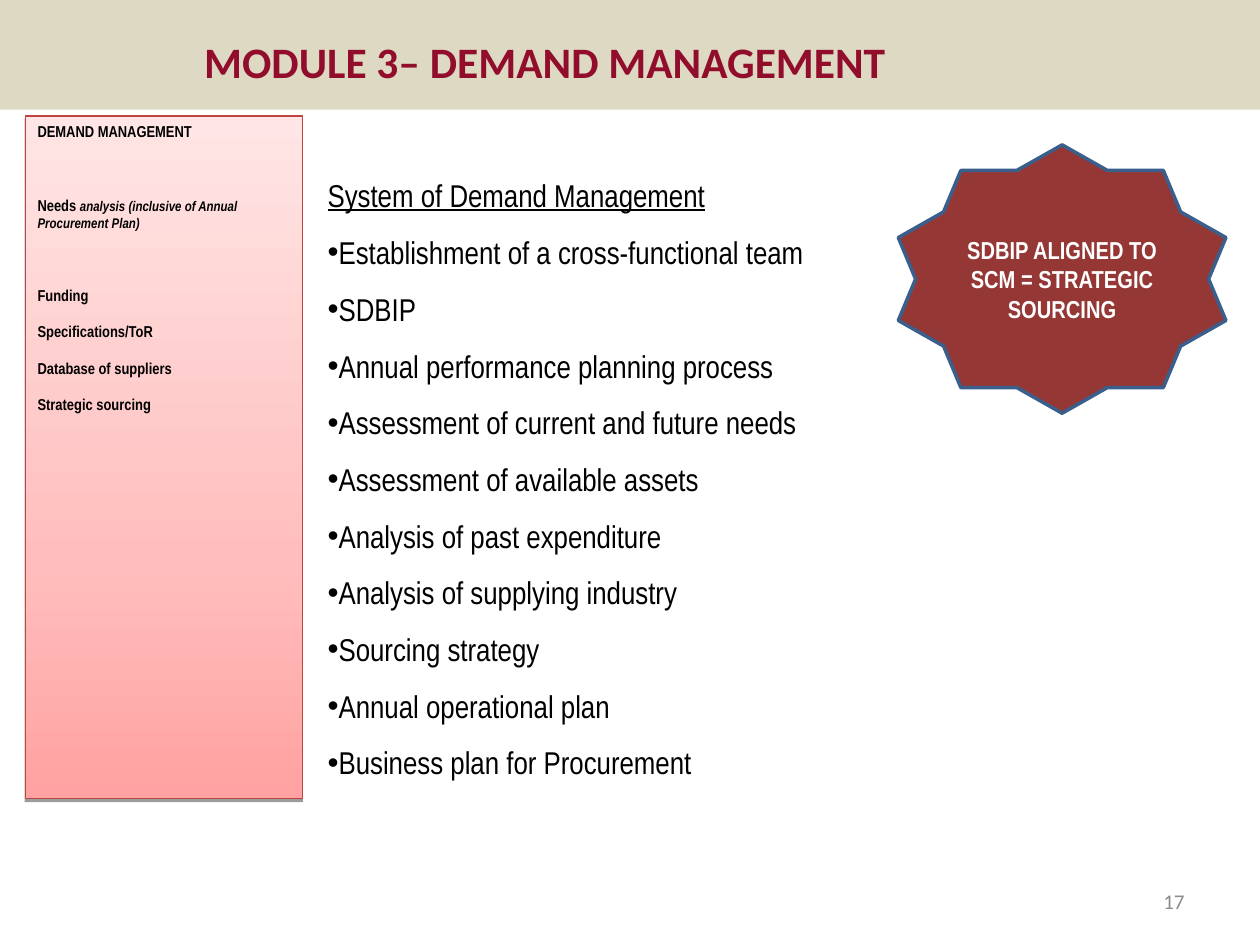
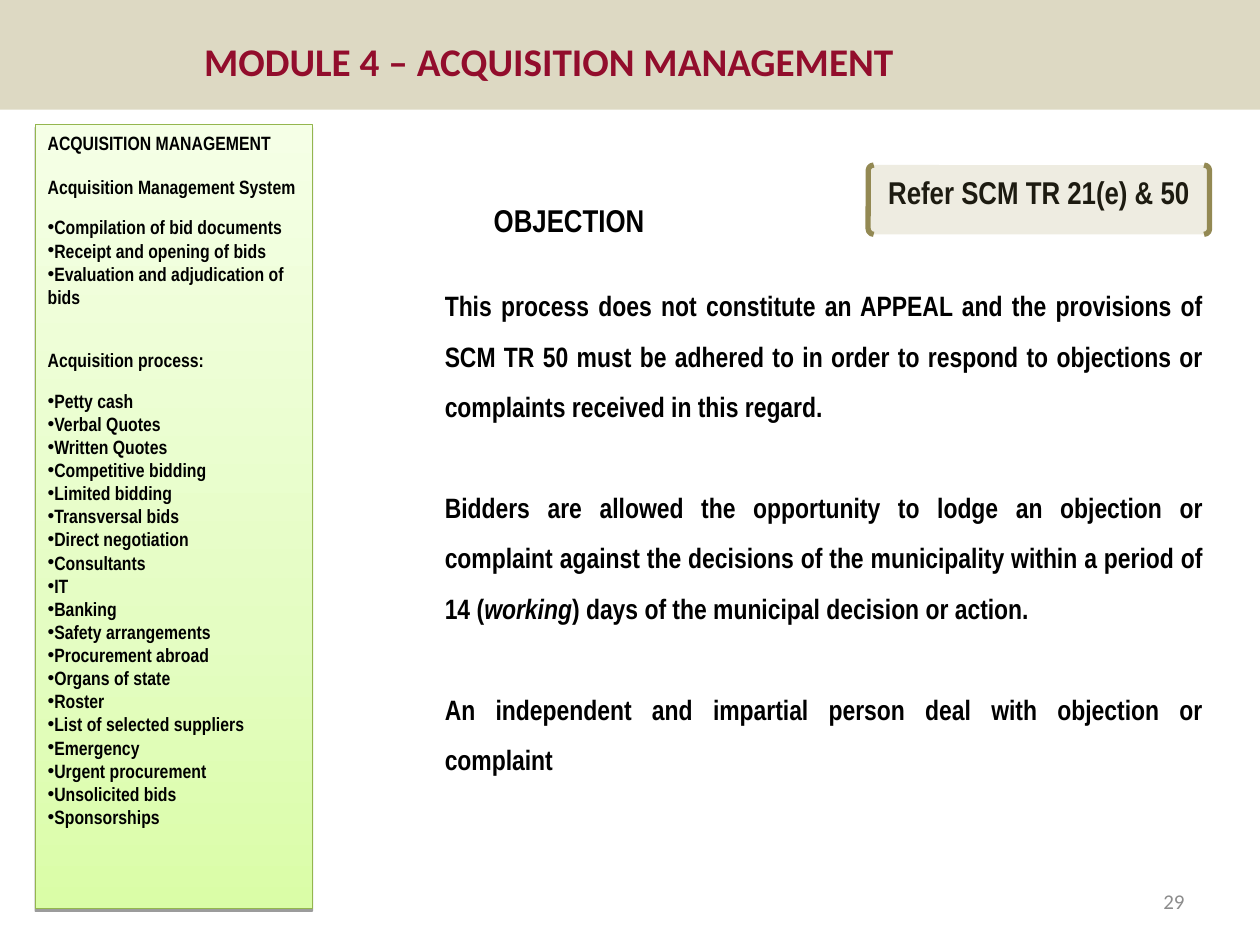
from dataclasses import dataclass, field
from typing import Any, NamedTuple

from lxml import etree
from pptx import Presentation
from pptx.dml.color import RGBColor
from pptx.enum.shapes import MSO_SHAPE
from pptx.enum.text import MSO_ANCHOR, MSO_AUTO_SIZE, PP_ALIGN
from pptx.oxml.ns import qn
from pptx.util import Emu, Pt

RECT, STAR, BRACKETS = MSO_SHAPE.RECTANGLE, MSO_SHAPE.STAR_10_POINT, MSO_SHAPE.DOUBLE_BRACKET
TOP, MIDDLE = MSO_ANCHOR.TOP, MSO_ANCHOR.MIDDLE
LEFT, CENTER, RIGHT, JUSTIFY = PP_ALIGN.LEFT, PP_ALIGN.CENTER, PP_ALIGN.RIGHT, PP_ALIGN.JUSTIFY
NO_FIT = MSO_AUTO_SIZE.NONE
PX = 9144  # EMU per px, 100 px to the inch


@dataclass(frozen=True)
class Theme:
    heading_font: str = "Calibri"
    body_font: str = "Arial Narrow"
    band: str = "DDD9C3"
    title: str = "920D2C"
    text: str = "000000"
    number: str = "8C8C8C"
    star_fill: str = "953735"
    star_line: str = "3A5F8C"
    star_text: str = "FFFFFF"
    note_fill: str = "EEECE1"
    note_line: str = "938953"
    note_text: str = "1D1B11"
    red_stops: tuple = ("FFA2A1", "FFBEBD", "FFE5E5")
    red_line: str = "BC4542"
    green_stops: tuple = ("DAFDA7", "E4FDC2", "F5FFE6")
    green_line: str = "94B64E"
    large: int = 18
    medium: int = 16
    callout: int = 14
    small: int = 12


THEME = Theme()


class Box(NamedTuple):
    left: int
    top: int
    width: int
    height: int

    def emu(self) -> list[Emu]:
        return [Emu(v * PX) for v in self]


class Run(NamedTuple):
    text: str
    format: dict[str, Any] = {}


class TextStyle(NamedTuple):
    size: float
    color: str = THEME.text
    font: str = THEME.body_font
    bold: bool = True


@dataclass
class Para:
    runs: list[Run]
    bullet: bool = False
    format: dict[str, Any] = field(default_factory=dict)


@dataclass
class Sidebar:
    box: Box
    stops: tuple
    line: str
    size: int
    paras: list[Para]


def para(text: str, bullet: bool = False, **values: Any) -> Para:
    return Para([Run(text)], bullet, values)


def bullets(*texts: str) -> list[Para]:
    return [para(text, True) for text in texts]


def apply(target: Any, values: dict[str, Any]) -> None:
    for name, value in values.items():
        setattr(target, name, value)


def sub(parent: Any, tag: str, **attrs: Any) -> Any:
    return etree.SubElement(parent, qn(tag), {k: str(v) for k, v in attrs.items()})


# Text
def write(shape: Any, paras: list[Para], style: TextStyle, anchor: Any = TOP,
          align: Any = LEFT, spacing: float = 1.0, wrap: bool = True) -> None:
    tf = shape.text_frame
    apply(tf, dict(auto_size=NO_FIT, word_wrap=wrap, vertical_anchor=anchor))
    for i, item in enumerate(paras):
        p = tf.paragraphs[0] if i == 0 else tf.add_paragraph()
        apply(p, dict(alignment=align, line_spacing=spacing,
                      space_before=Pt(0), space_after=Pt(0)) | item.format)
        p_pr = p._p.get_or_add_pPr()
        p_pr.set("marL", "0")
        p_pr.set("indent", "0")
        if item.bullet:
            sub(p_pr, "a:buFont", typeface="Arial")
            sub(p_pr, "a:buChar", char="•")
        else:
            sub(p_pr, "a:buNone")
        for run in item.runs:
            r = p.add_run()
            r.text = run.text
            apply(r.font, dict(name=style.font, size=Pt(style.size), bold=style.bold) | run.format)
            r.font.color.rgb = RGBColor.from_string(style.color)


def place(shape: Any, box: Box) -> Any:
    apply(shape, dict(zip(("left", "top", "width", "height"), box.emu())))
    return shape


def add_label(s: Any, box: Box, text: str, style: TextStyle, **layout: Any) -> None:
    write(s.shapes.add_textbox(*box.emu()), [para(text)], style, **layout)


# Shapes
def add_shape(s: Any, kind: Any, box: Box, fill: str | None = None,
              line: str | None = None, width: float = 1) -> Any:
    sp = s.shapes.add_shape(kind, *box.emu())
    sp.shadow.inherit = False
    if fill:
        sp.fill.solid()
        sp.fill.fore_color.rgb = RGBColor.from_string(fill)
    if line:
        sp.line.color.rgb = RGBColor.from_string(line)
        sp.line.width = Pt(width)
    else:
        sp.line.fill.background()
    return sp


def add_sidebar(s: Any, bar: Sidebar) -> None:
    sp = add_shape(s, RECT, bar.box, line=bar.line, width=0.75)
    sp_pr = sp._element.spPr
    # Gradient rising from the bottom
    grad = etree.Element(qn("a:gradFill"), rotWithShape="1")
    stops = sub(grad, "a:gsLst")
    for pos, color in zip((0, 35, 100), bar.stops):
        sub(sub(stops, "a:gs", pos=pos * 1000), "a:srgbClr", val=color)
    sub(grad, "a:lin", ang=270 * 60000, scaled=1)
    sp_pr.find(qn("a:prstGeom")).addnext(grad)
    # Thin shadow below
    shadow = sub(sp_pr.find(qn("a:effectLst")), "a:outerShdw", blurRad=0, dist=Pt(1.6),
                 dir=90 * 60000, rotWithShape=0)
    sub(sub(shadow, "a:srgbClr", val="000000"), "a:alpha", val=38000)
    write(sp, bar.paras, TextStyle(bar.size))


# Frame shared by the slides: band, title, slide number
def add_module_slide(prs: Any, title: str, title_size: float, number: int) -> Any:
    s = prs.slides.add_slide(prs.slide_layouts[1])
    band = add_shape(s, RECT, Box(0, 0, 1000, 87), THEME.band)
    s.shapes._spTree.insert(2, band._element)
    write(place(s.shapes.title, Box(152, 21, 607, 55)), [para(title)],
          TextStyle(title_size, THEME.title, THEME.heading_font), anchor=MIDDLE)
    add_label(s, Box(717, 695, 233, 40), str(number),
              TextStyle(THEME.small, THEME.number, THEME.heading_font, False),
              anchor=MIDDLE, align=RIGHT)
    return s


def build_demand(prs: Any) -> None:
    s = add_module_slide(prs, "MODULE 3– DEMAND MANAGEMENT", 24.8, 17)
    after = dict(space_after=Pt(10))
    section = after | dict(space_before=Pt(21))
    needs = [Run("Needs "), Run("analysis (inclusive of Annual Procurement Plan)",
                                dict(size=Pt(8), italic=True))]
    add_sidebar(s, Sidebar(Box(20, 92, 220, 542), THEME.red_stops, THEME.red_line, 9, [
        para("DEMAND MANAGEMENT", **after),
        Para(needs, format=section),
        para("Funding", **section),
        *(para(t, **after) for t in ("Specifications/ToR", "Database of suppliers",
                                     "Strategic sourcing")),
    ]))
    star = add_shape(s, STAR, Box(713, 115, 260, 213), THEME.star_fill, THEME.star_line, 2)
    write(star, [para("SDBIP ALIGNED TO SCM = STRATEGIC SOURCING")],
          TextStyle(THEME.callout, THEME.star_text), anchor=MIDDLE, align=CENTER)
    steps = [
        Para([Run("System of Demand Management", dict(underline=True))]),
        *bullets("Establishment of a cross-functional team", "SDBIP",
                 "Annual performance planning process", "Assessment of current and future needs",
                 "Assessment of available assets", "Analysis of past expenditure",
                 "Analysis of supplying industry", "Sourcing strategy",
                 "Annual operational plan", "Business plan for Procurement"),
    ]
    write(place(s.placeholders[1], Box(250, 120, 500, 510)), steps,
          TextStyle(THEME.large, bold=False), align=JUSTIFY, spacing=1.5)


def build_acquisition(prs: Any) -> None:
    s = add_module_slide(prs, "MODULE 4 – ACQUISITION MANAGEMENT", 22.4, 29)
    # Objection process
    gap = dict(space_before=Pt(29))
    rules = [
        para("This process does not constitute an APPEAL and the provisions of SCM TR 50 must be "
             "adhered to in order to respond to objections or complaints received in this regard."),
        Para([Run("Bidders are allowed the opportunity to lodge an objection or complaint against "
                  "the decisions of the municipality within a period of 14 ("),
              Run("working", dict(italic=True)),
              Run(") days of the municipal decision or action.")], format=gap),
        para("An independent and impartial person deal with objection or complaint", **gap),
    ]
    write(place(s.placeholders[1], Box(343, 209, 622, 414)), rules,
          TextStyle(THEME.medium), anchor=MIDDLE, align=JUSTIFY, spacing=1.5)
    add_label(s, Box(382, 155, 141, 40), "OBJECTION", TextStyle(THEME.large), wrap=False)

    # Regulation reference
    note = add_shape(s, BRACKETS, Box(689, 131, 271, 55), THEME.note_fill, THEME.note_line, 3)
    note.adjustments[0] = 0.08
    for side in ("left", "top", "right", "bottom"):
        setattr(note.text_frame, f"margin_{side}", Emu(5 * PX))
    write(note, [para("Refer SCM TR 21(e) & 50")],
          TextStyle(THEME.large, THEME.note_text), align=CENTER)

    add_sidebar(s, Sidebar(Box(28, 99, 220, 622), THEME.green_stops, THEME.green_line, 11, [
        para("ACQUISITION MANAGEMENT", space_after=Pt(12)),
        para("Acquisition Management System", space_after=Pt(10)),
        *bullets("Compilation of bid documents", "Receipt and opening of bids",
                 "Evaluation and adjudication of bids"),
        para("Acquisition process:", space_before=Pt(23), space_after=Pt(10)),
        *bullets("Petty cash", "Verbal Quotes", "Written Quotes", "Competitive bidding",
                 "Limited bidding", "Transversal bids", "Direct negotiation", "Consultants",
                 "IT", "Banking", "Safety arrangements", "Procurement abroad",
                 "Organs of state", "Roster", "List of selected suppliers", "Emergency",
                 "Urgent procurement", "Unsolicited bids", "Sponsorships"),
    ]))


def main() -> None:
    prs = Presentation()
    apply(prs, dict(slide_width=Emu(1000 * PX), slide_height=Emu(750 * PX)))
    build_demand(prs)
    build_acquisition(prs)
    prs.save("out.pptx")


if __name__ == "__main__":
    main()
